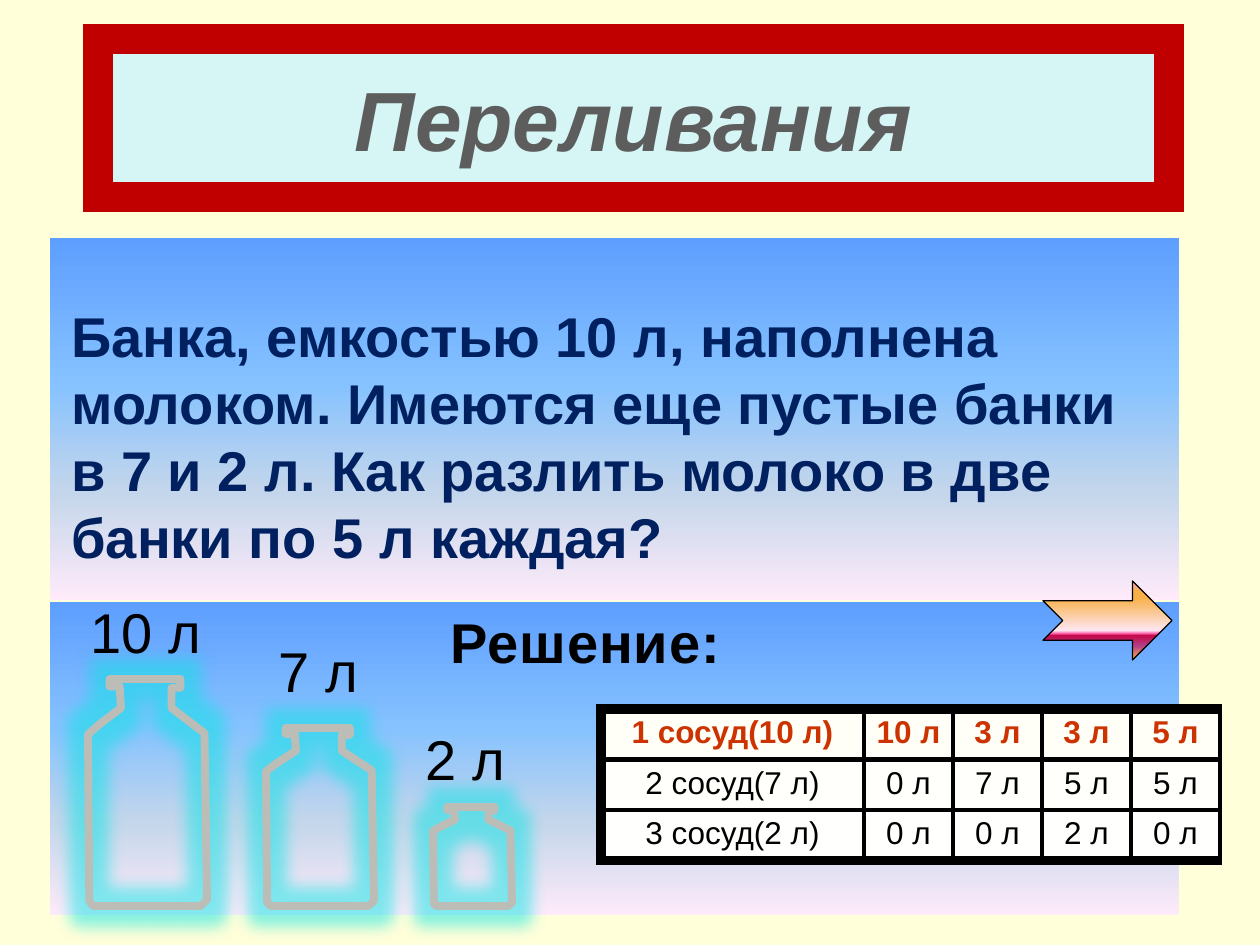
from typing import NamedTuple

from lxml import etree
from pptx import Presentation, util as u
from pptx.dml.color import RGBColor
from pptx.enum import shapes, text
from pptx.oxml import ns

SCALE = 914400 / 126  # EMU in one px
FONT = "Arial"
CREAM = RGBColor(0xFF, 0xFF, 0xD9)
MINT = RGBColor(0xD6, 0xF5, 0xF5)
CRIMSON = RGBColor(0xC0, 0x00, 0x00)
GREY = RGBColor(0x5D, 0x5D, 0x5D)
NAVY = RGBColor(0x00, 0x20, 0x60)
BLACK = RGBColor(0x00, 0x00, 0x00)
RUST = RGBColor(0xCC, 0x33, 0x00)
GLASS = RGBColor(0xBD, 0xBD, 0xB7)
CYAN = RGBColor(0x08, 0xE5, 0xE5)
ROWFILLS = [RGBColor(0xFF, 0xFF, tone) for tone in (0xF7, 0xFC, 0xFD)]

SKY = [(0, "5E9EFF"), (40, "85C2FF"), (70, "C4D6EB"), (100, "FFEBFA")]
SUNSET = [(0, "FC9FCB"), (13, "F8B049"), (21, "F8B049"), (63, "FEE7F2"),
          (67, "F952A0"), (69, "C50849"), (82, "B43E85"), (100, "F8B049")]

# Jar outline in thousandths of its width and height
OUTLINE = [(500, 0), (181, 0), (181, 33), (266, 33), (277, 128), (96, 200),
           (0, 244), (11, 978), (43, 1000), (947, 1000), (1000, 972),
           (979, 239), (702, 128), (702, 39), (777, 39), (777, 0)]


class Box(NamedTuple):
    left: int
    top: int
    width: int
    height: int


class Label(NamedTuple):
    words: str
    box: Box
    color: RGBColor = BLACK
    bold: bool = False
    center: bool = False
    gap: int = 0  # letter spacing, hundredths of a point


class Jar(NamedTuple):
    box: Box
    label: Label


LABELS = [
    Label("Банка, емкостью 10 л, наполнена молоком. Имеются еще пустые банки "
          "в 7 и 2 л. Как разлить молоко в две банки по 5 л каждая?",
          Box(59, 295, 1102, 285), NAVY, bold=True),
    Label("Решение:", Box(374, 601, 423, 81), bold=True, center=True, gap=50),
]
JARS = [
    Jar(Box(88, 679, 119, 227), Label("10 л", Box(78, 591, 148, 81))),
    Jar(Box(266, 728, 108, 178), Label("7 л", Box(266, 630, 119, 81))),
    Jar(Box(433, 807, 79, 99), Label("2 л", Box(413, 718, 119, 81))),
]
STEPS = [
    ["1 сосуд(10 л)", "10 л", "3 л", "3 л", "5 л"],
    ["2 сосуд(7 л)", "0 л", "7 л", "5 л", "5 л"],
    ["3 сосуд(2 л)", "0 л", "0 л", "2 л", "0 л"],
]


def px(size: float) -> int:
    return round(size * SCALE)


def emu(box: Box) -> list[int]:
    return [px(side) for side in box]


def add_xml(parent, tag: str, **attrs: str):
    return etree.SubElement(parent, ns.qn(tag), **attrs)


def add_run(par, words: str, size: int, color: RGBColor, bold: bool):
    run = par.add_run()
    run.text = words
    font = run.font
    font.name, font.size, font.bold = FONT, u.Pt(size), bold
    font.color.rgb = color
    return run


def set_grad(fill, root, stops: list[tuple[int, str]]) -> None:
    """Fill from top to bottom with any number of stops."""
    fill.gradient()
    fill.gradient_angle = 270
    group = root.find(".//" + ns.qn("a:gsLst"))
    for stop in list(group):
        group.remove(stop)
    for place, color in stops:
        stop = add_xml(group, "a:gs", pos=str(place * 1000))
        add_xml(stop, "a:srgbClr", val=color)


def set_edges(cell, color: RGBColor, **widths: float) -> None:
    props = cell._tc.get_or_add_tcPr()
    for spot, side in enumerate("LRTB"):
        line = etree.Element(ns.qn("a:ln" + side), w=str(u.Pt(widths[side])))
        solid = add_xml(line, "a:solidFill")
        add_xml(solid, "a:srgbClr", val=str(color))
        props.insert(spot, line)


def add_grid(slide, box: Box, cols: list[int], rows: list[int]):
    grid = slide.shapes.add_table(len(rows), len(cols), *emu(box)).table
    grid.first_row = grid.horz_banding = False
    for col, width in zip(grid.columns, cols):
        col.width = px(width)
    for row, height in zip(grid.rows, rows):
        row.height = px(height)
    return grid


def add_label(slide, label: Label) -> None:
    frame = slide.shapes.add_textbox(*emu(label.box)).text_frame
    frame.word_wrap = True
    par = frame.paragraphs[0]
    if label.center:
        par.alignment = text.PP_ALIGN.CENTER
    run = add_run(par, label.words, 32, label.color, label.bold)
    if label.gap:
        run.font._element.set("spc", str(label.gap))


def add_jar(slide, jar: Jar) -> None:
    box = jar.box
    dots = [(px(box.left + box.width * x / 1000),
             px(box.top + box.height * y / 1000)) for x, y in OUTLINE]
    pen = slide.shapes.build_freeform(*dots[0])
    pen.add_line_segments(dots[1:], close=True)
    shape = pen.convert_to_shape()
    shape.fill.background()
    shape.line.color.rgb = GLASS
    shape.line.width = u.Pt(4.5)
    add_xml(shape.line._get_or_add_ln(), "a:round")
    # Glow around the glass
    glow = add_xml(add_xml(shape._element.spPr, "a:effectLst"),
                   "a:glow", rad=str(u.Pt(18)))
    tint = add_xml(glow, "a:srgbClr", val=str(CYAN))
    add_xml(tint, "a:alpha", val="50000")
    add_label(slide, jar.label)


def add_title(slide) -> None:
    title = slide.shapes.title
    title.left, title.top, title.width, title.height = emu(
        Box(98, 39, 1071, 158))
    title.fill.solid()
    title.fill.fore_color.rgb = MINT
    title.line.color.rgb = CRIMSON
    title.line.width = u.Pt(17)
    add_xml(title.line._get_or_add_ln(), "a:miter", lim="800000")
    frame = title.text_frame
    frame.vertical_anchor = text.MSO_ANCHOR.MIDDLE
    par = frame.paragraphs[0]
    par.alignment = text.PP_ALIGN.CENTER
    add_run(par, "Переливания", 48, GREY, True).font.italic = True


def add_panels(slide) -> None:
    grid = add_grid(slide, Box(49, 237, 1131, 680), [1131], [364, 316])
    for cell, base in zip(grid.iter_cells(), (1, 3)):
        set_grad(cell.fill, cell._tc, SKY)
        set_edges(cell, CREAM, L=1, R=1, T=1, B=base)


def add_steps(slide) -> None:
    grid = add_grid(slide, Box(601, 709, 619, 150), [263] + [89] * 4, [50] * 3)
    for i, row in enumerate(STEPS):
        for j, words in enumerate(row):
            cell = grid.cell(i, j)
            cell.margin_left = cell.margin_right = px(6)
            cell.fill.solid()
            cell.fill.fore_color.rgb = ROWFILLS[i]
            set_edges(cell, BLACK, L=3 if j else 6, R=3, T=3 if i else 6,
                      B=6 if i == len(STEPS) - 1 else 3)
            par = cell.text_frame.paragraphs[0]
            par.alignment = text.PP_ALIGN.CENTER
            add_run(par, words, 18, BLACK if i else RUST, i == 0)


def add_arrow(slide) -> None:
    arrow = slide.shapes.add_shape(
        shapes.MSO_SHAPE.NOTCHED_RIGHT_ARROW, *emu(Box(1043, 581, 129, 79)))
    arrow.shadow.inherit = False
    set_grad(arrow.fill, arrow._element, SUNSET)
    arrow.line.color.rgb = BLACK
    arrow.line.width = u.Pt(0.75)


def main() -> None:
    deck = Presentation()
    deck.slide_width, deck.slide_height = px(1260), px(945)
    slide = deck.slides.add_slide(deck.slide_layouts[5])
    slide.background.fill.solid()
    slide.background.fill.fore_color.rgb = CREAM
    # Backdrop and wording
    add_panels(slide)
    add_title(slide)
    for label in LABELS:
        add_label(slide, label)
    # Jars, pouring steps and arrow
    for jar in JARS:
        add_jar(slide, jar)
    add_steps(slide)
    add_arrow(slide)
    deck.save("out.pptx")


if __name__ == "__main__":
    main()
